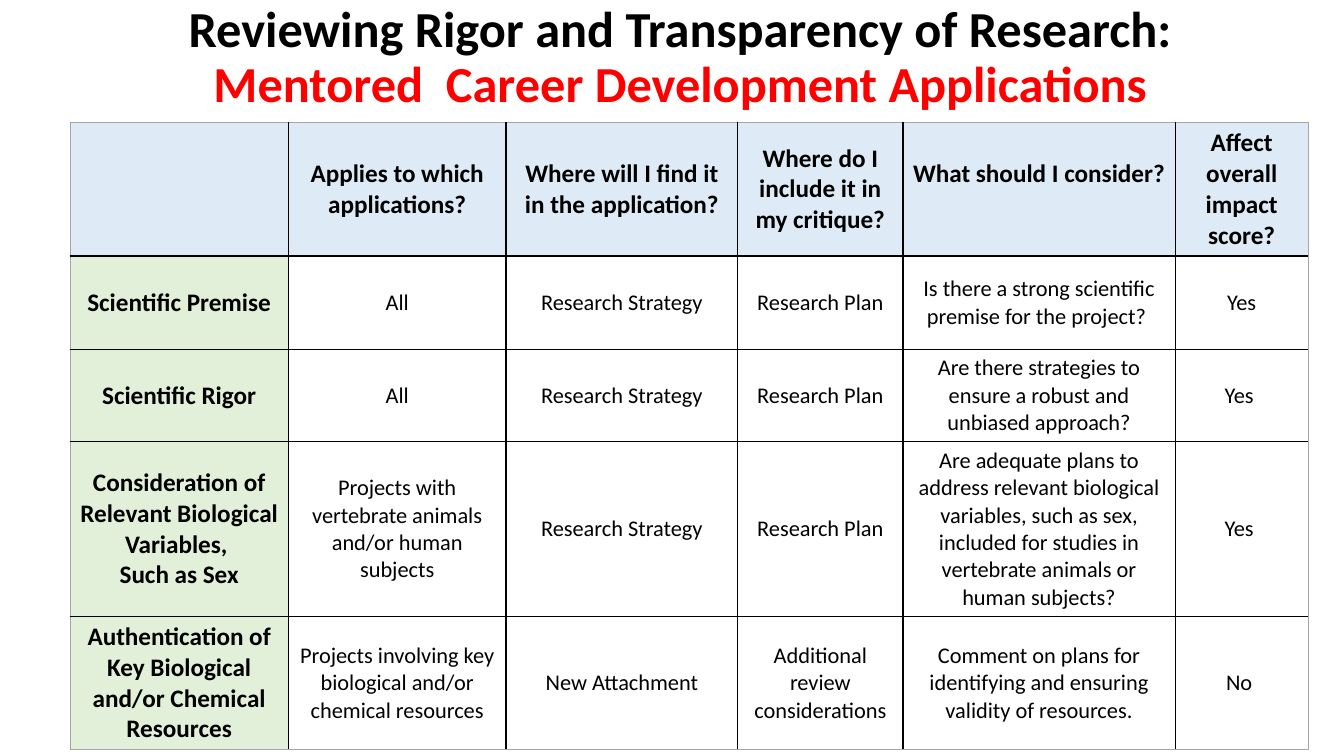
import pptx
import pptx.dml.color
import pptx.enum.text
import pptx.oxml
import pptx.oxml.ns
import pptx.util

Pt = pptx.util.Pt
ALIGN = pptx.enum.text.PP_ALIGN
ANCHOR = pptx.enum.text.MSO_ANCHOR

COLUMN_WIDTHS = [156, 155.5, 165.5, 118, 194.5, 95]
ROW_HEIGHTS = [95.5, 66.5, 66, 125, 95]
ROWS = [
    ["", "Applies to which applications?", "Where will I find it in the application?",
     "Where do I include it in my critique?", "What should I consider?",
     "Affect overall impact score?"],
    ["Scientific Premise", "All", "Research Strategy", "Research Plan",
     "Is there a strong scientific premise for the project? ", "Yes"],
    ["Scientific Rigor", "All", "Research Strategy", "Research Plan",
     "Are there strategies to ensure a robust and unbiased approach?", "Yes "],
    ["Consideration of Relevant Biological Variables, \nSuch as Sex",
     "Projects with vertebrate animals and/or human subjects",
     "Research Strategy", "Research Plan",
     "Are adequate plans to address relevant biological variables, such as sex, "
     "included for studies in vertebrate animals or human subjects?", "Yes "],
    ["Authentication of Key Biological and/or Chemical Resources",
     "Projects involving key biological and/or chemical resources",
     "New Attachment", "Additional review considerations",
     "Comment on plans for identifying and ensuring validity of resources.", "No "],
]


def color(hex_string):
    return pptx.dml.color.RGBColor.from_string(hex_string)


def write_text(frame, text, size=16, bold=False, colors=("000000",), spacing=None):
    """Write one centred paragraph per line; colors are used in turn."""
    frame.word_wrap = True
    for index, line in enumerate(text.split("\n")):
        paragraph = frame.paragraphs[0] if index == 0 else frame.add_paragraph()
        paragraph.alignment = ALIGN.CENTER
        if spacing:
            paragraph.line_spacing = spacing
        run = paragraph.add_run()
        run.text = line
        run.font.name = "Calibri"
        run.font.size = Pt(size)
        run.font.bold = bold
        run.font.color.rgb = color(colors[index % len(colors)])


def add_border(cell, side, line_color, width):
    """Draw one side (L, R, T or B) of a cell."""
    cell._tc.get_or_add_tcPr().append(pptx.oxml.parse_xml(
        f'<a:ln{side} {pptx.oxml.ns.nsdecls("a")} w="{Pt(width)}">'
        f'<a:solidFill><a:srgbClr val="{line_color}"/></a:solidFill></a:ln{side}>'))


class ReviewSlide:
    header_fill = "DEEBF7"
    topic_fill = "E2F0D9"
    body_fill = "FFFFFF"
    inner_line = ("000000", 1)
    header_line = ("000000", 1.5)
    outer_line = ("A6A6A6", 0.5)

    def __init__(self, presentation):
        self.slide = presentation.slides.add_slide(presentation.slide_layouts[6])

    def add_title(self, text, left, top, width, height):
        box = self.slide.shapes.add_textbox(Pt(left), Pt(top), Pt(width), Pt(height))
        box.text_frame.vertical_anchor = ANCHOR.MIDDLE
        write_text(box.text_frame, text, size=36, bold=True,
                   colors=("000000", "FF0000"), spacing=0.9)

    def add_table(self, rows, left, top, widths, heights):
        table = self.slide.shapes.add_table(
            len(rows), len(widths), Pt(left), Pt(top),
            Pt(sum(widths)), Pt(sum(heights))).table
        table.first_row = table.horz_banding = False
        for column, width in zip(table.columns, widths):
            column.width = Pt(width)
        for row, height in zip(table.rows, heights):
            row.height = Pt(height)
        for row_index, texts in enumerate(rows):
            for column_index, text in enumerate(texts):
                self.format_cell(table, row_index, column_index, text)
        return table

    def format_cell(self, table, row, column, text):
        cell = table.cell(row, column)
        last_row, last_column = len(table.rows) - 1, len(table.columns) - 1
        lines = {
            "L": self.inner_line if column else self.outer_line,
            "R": self.inner_line if column < last_column else self.outer_line,
            "T": (self.outer_line, self.header_line)[row] if row < 2 else self.inner_line,
            "B": self.header_line if row == 0
            else self.inner_line if row < last_row else self.outer_line,
        }
        for side, line in lines.items():
            add_border(cell, side, *line)
        cell.fill.solid()
        cell.fill.fore_color.rgb = color(
            self.header_fill if row == 0
            else self.topic_fill if column == 0 else self.body_fill)
        cell.vertical_anchor = ANCHOR.MIDDLE
        if text:
            heading = row == 0 or column == 0
            write_text(cell.text_frame, text, size=18 if heading else 16, bold=heading)


def main():
    presentation = pptx.Presentation()
    presentation.slide_width, presentation.slide_height = Pt(960), Pt(540)
    review = ReviewSlide(presentation)
    review.add_title("Reviewing Rigor and Transparency of Research:\n"
                     "Mentored  Career Development Applications", 45, 0, 882, 84)
    table = review.add_table(ROWS, 50, 87.5, COLUMN_WIDTHS, ROW_HEIGHTS)
    table.cell(0, 4).margin_bottom = Pt(25.5)
    presentation.save("out.pptx")


if __name__ == "__main__":
    main()
